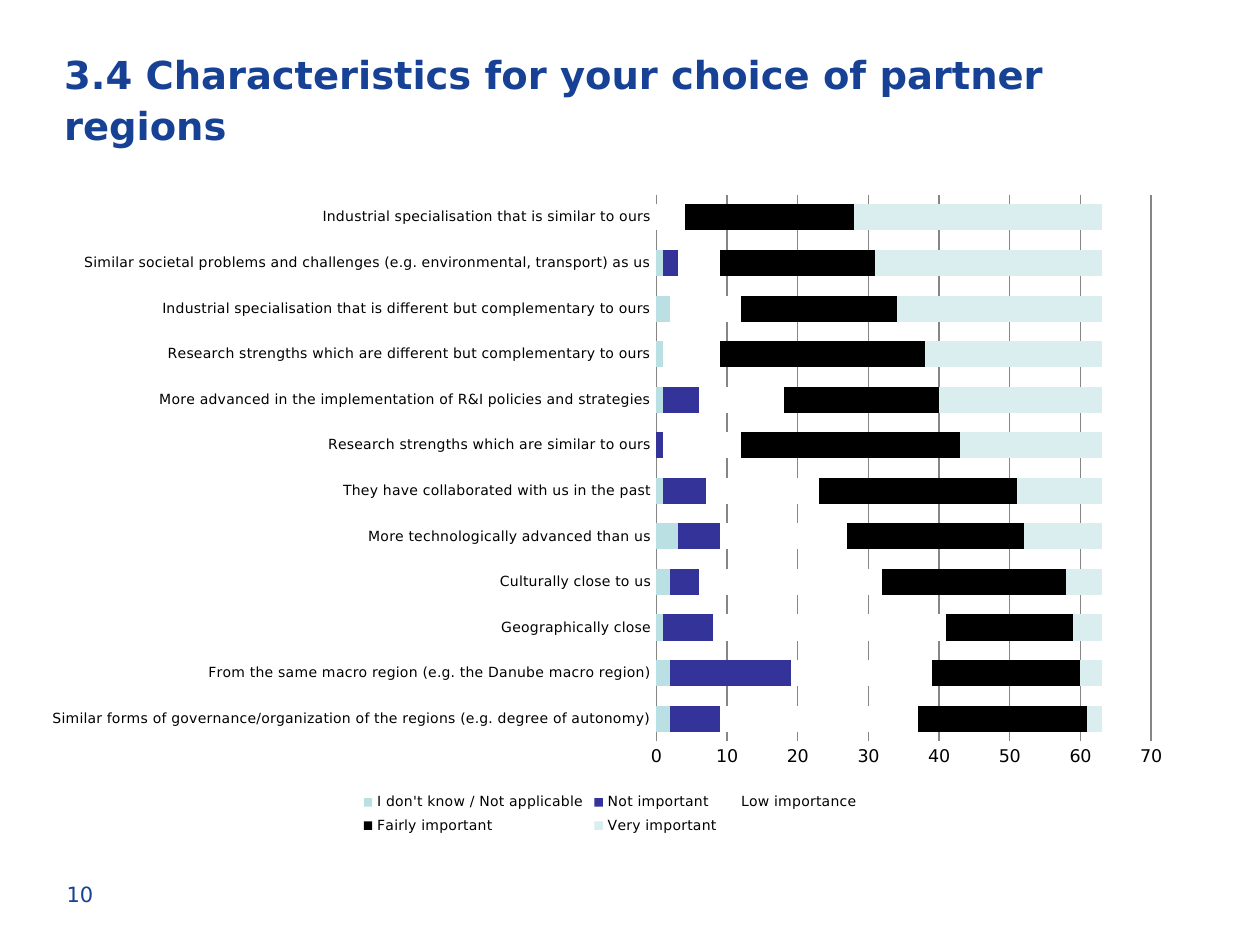
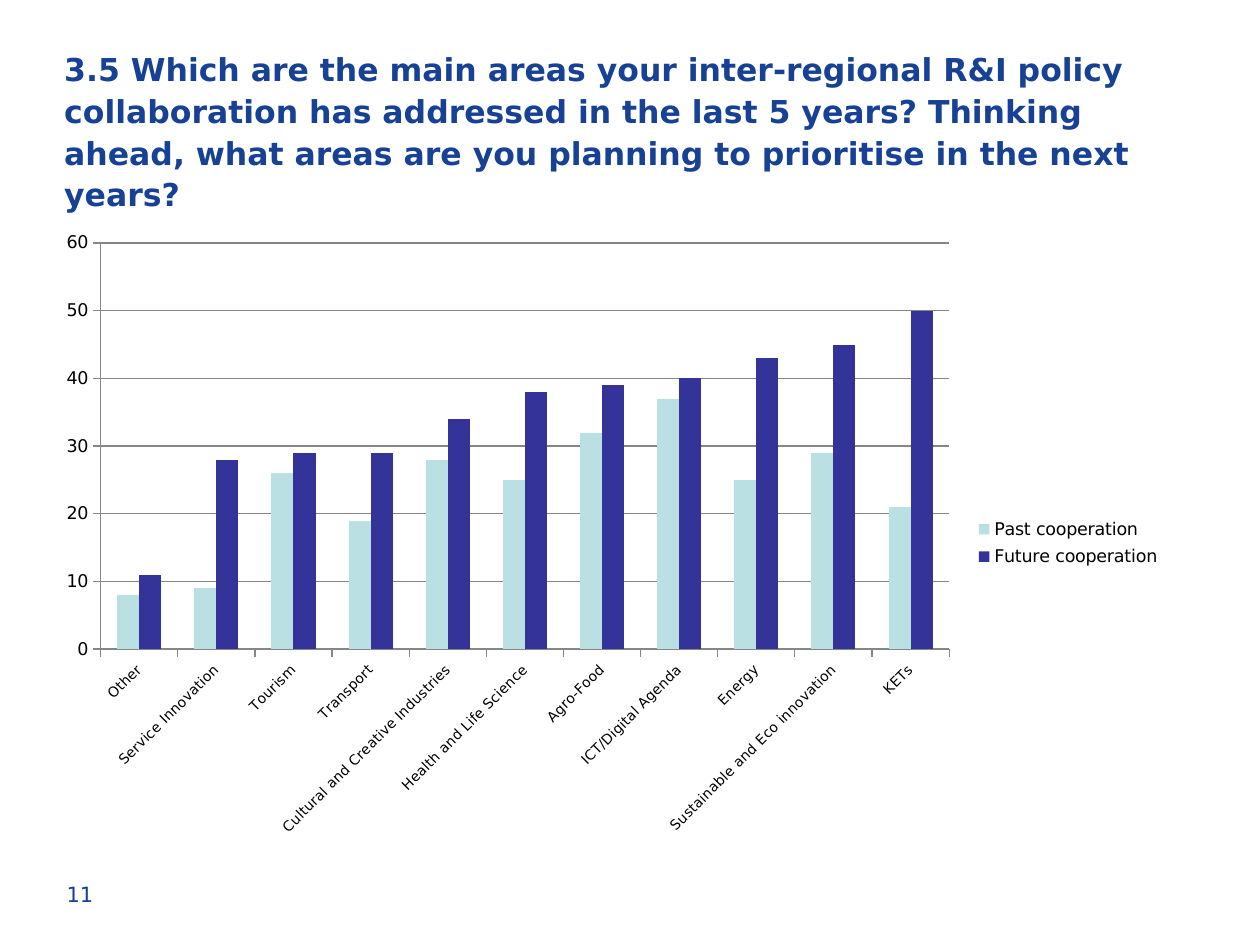
from lxml.etree import SubElement
from pptx import Presentation
from pptx.chart.data import CategoryChartData
from pptx.dml.color import RGBColor
from pptx.enum.chart import XL_CHART_TYPE as CT, XL_LEGEND_POSITION as LP, XL_TICK_MARK as TM
from pptx.enum.text import MSO_ANCHOR as MA, MSO_AUTO_SIZE as AS, PP_ALIGN as PA
from pptx.oxml.ns import qn
from pptx.util import Inches, Pt

FONT = "DejaVu Sans"
BLUE, BLACK, GRID = "164194", "000000", "868686"
TEAL, INDIGO, WHITE, PALE = "BBE0E3", "333399", "FFFFFF", "DAEDEF"
COLS, ROWS = 100, 75


def rgb(value):
    return RGBColor.from_string(value)


def apply(obj, **values):
    for name, value in values.items():
        setattr(obj, name, value)


class Deck:
    def __init__(self):
        self.prs = Presentation()
        apply(self.prs, slide_width=Inches(10), slide_height=Inches(7.5))
        self.s = None

    def cells(self, col, row, cols, rows):
        dx, dy = self.prs.slide_width / COLS, self.prs.slide_height / ROWS
        return [round(v) for v in (col * dx, row * dy, cols * dx, rows * dy)]

    def font(self, font, size, color=BLACK, bold=False):
        apply(font, name=FONT, size=Pt(size), bold=bold)
        font.color.rgb = rgb(color)

    def slide(self, title, size, number):
        self.s = self.prs.slides.add_slide(self.prs.slide_layouts[5])
        self.title(title, size)
        self.number(number)

    def title(self, text, size):
        sp = self.s.shapes.title
        left, top, width, height = self.cells(5.1, 3.7, 89.8, 7.1)
        apply(sp, left=left, top=top, width=width, height=height)
        tf = sp.text_frame
        apply(tf, text=text, word_wrap=True, auto_size=AS.NONE, vertical_anchor=MA.TOP,
              margin_left=0, margin_right=0, margin_top=0, margin_bottom=0)
        p = tf.paragraphs[0]
        apply(p, alignment=PA.LEFT, line_spacing=1.1)
        self.font(p.runs[0].font, size, BLUE, True)

    def number(self, value):
        sp = self.s.shapes.add_textbox(*self.cells(4.3, 69, 23.3, 4))
        tf = sp.text_frame
        apply(tf, text=str(value), word_wrap=True, vertical_anchor=MA.MIDDLE,
              margin_top=0, margin_bottom=0)
        self.font(tf.paragraphs[0].runs[0].font, 12, BLUE)

    def layout(self, parent, index, box, inner=False):
        for old in parent.findall(qn("c:layout")):
            parent.remove(old)
        layout = SubElement(parent, qn("c:layout"))
        parent.insert(index, layout)
        manual = SubElement(layout, qn("c:manualLayout"))
        tags = [("layoutTarget", "inner")] if inner else []
        tags += [("xMode", "edge"), ("yMode", "edge"), *zip("xywh", box)]
        for tag, val in tags:
            SubElement(manual, qn(f"c:{tag}")).set("val", str(val))

    def axis(self, axis, size, tick, line=True):
        apply(axis, major_tick_mark=tick, minor_tick_mark=TM.NONE)
        self.font(axis.tick_labels.font, size)
        if line:
            self.line(axis.format.line)
        else:
            axis.format.line.fill.background()

    def line(self, line):
        line.color.rgb = rgb(GRID)
        line.width = Pt(0.75)

    def chart(self, kind, box, cats, series, top, gap, overlap, tick, val_line,
              plot_box, legend_pos, legend_size, legend_box, angle=0):
        data = CategoryChartData()
        data.categories = cats
        for name, _, vals in series:
            data.add_series(name, vals)
        chart = self.s.shapes.add_chart(kind, *self.cells(*box), data).chart
        apply(chart, has_title=False, has_legend=True)
        self.font(chart.font, 10)

        plot = chart.plots[0]
        apply(plot, gap_width=gap, overlap=overlap, vary_by_categories=False)
        for ser, (_, color, _) in zip(plot.series, series):
            ser.format.fill.solid()
            ser.format.fill.fore_color.rgb = rgb(color)
            ser.invert_if_negative = False

        cat, val = chart.category_axis, chart.value_axis
        self.axis(cat, 8, tick)
        self.axis(val, 10, tick, val_line)
        apply(val, minimum_scale=0, maximum_scale=top, major_unit=10,
              has_major_gridlines=True)
        self.line(val.major_gridlines.format.line)
        if angle:
            body = cat.tick_labels.font._element.getparent().getparent().getparent()
            body.find(qn("a:bodyPr")).set("rot", str(angle * 60000))

        legend = chart.legend
        apply(legend, position=legend_pos, include_in_layout=False)
        self.font(legend.font, legend_size)
        root = chart._chartSpace
        self.layout(root.xpath("c:chart/c:plotArea")[0], 0, plot_box, inner=True)
        self.layout(root.xpath("c:chart/c:legend")[0], 1, legend_box)


CHARACTERISTICS = [
    "Similar forms of governance/organization of the regions (e.g. degree of autonomy)",
    "From the same macro region (e.g. the Danube macro region)",
    "Geographically close",
    "Culturally close to us",
    "More technologically advanced than us",
    "They have collaborated with us in the past",
    "Research strengths which are similar to ours",
    "More advanced in the implementation of R&I policies and strategies",
    "Research strengths which are different but complementary to ours",
    "Industrial specialisation that is different but complementary to ours",
    "Similar societal problems and challenges (e.g. environmental, transport) as us",
    "Industrial specialisation that is similar to ours",
]
IMPORTANCE = [
    ("I don't know / Not applicable", TEAL, [2, 2, 1, 2, 3, 1, None, 1, 1, 2, 1, None]),
    ("Not important", INDIGO, [7, 17, 7, 4, 6, 6, 1, 5, None, None, 2, None]),
    ("Low importance", WHITE, [28, 20, 33, 26, 18, 16, 11, 12, 8, 10, 6, 4]),
    ("Fairly important", BLACK, [24, 21, 18, 26, 25, 28, 31, 22, 29, 22, 22, 24]),
    ("Very important", PALE, [2, 3, 4, 5, 11, 12, 20, 23, 25, 29, 32, 35]),
]
AREAS = [
    "Other", "Service Innovation", "Tourism", "Transport",
    "Cultural and Creative Industries", "Health and Life Science", "Agro-Food",
    "ICT/Digital Agenda", "Energy", "Sustainable and Eco innovation", "KETs",
]
COOPERATION = [
    ("Past cooperation", TEAL, [8, 9, 26, 19, 28, 25, 32, 37, 25, 29, 21]),
    ("Future cooperation", INDIGO, [11, 28, 29, 29, 34, 38, 39, 40, 43, 45, 50]),
]


def main():
    deck = Deck()
    deck.slide("3.4 Characteristics for your choice of partner regions", 22, 10)
    deck.chart(CT.BAR_STACKED, (2.8, 14.4, 91.3, 52.3), CHARACTERISTICS, IMPORTANCE,
               top=70, gap=75, overlap=100, tick=TM.NONE, val_line=False,
               plot_box=(0.54, 0.02, 0.43, 0.83), legend_pos=LP.BOTTOM,
               legend_size=8, legend_box=(0.28, 0.92, 0.44, 0.08))

    deck.slide("3.5 Which are the main areas your inter-regional R&I policy collaboration "
               "has addressed in the last 5 years? Thinking ahead, what areas are you "
               "planning to prioritise in the next years?", 18, 11)
    deck.chart(CT.COLUMN_CLUSTERED, (3.5, 17.8, 89.8, 49.6), AREAS, COOPERATION,
               top=60, gap=150, overlap=0, tick=TM.OUTSIDE, val_line=True,
               plot_box=(0.05, 0.03, 0.75, 0.65), legend_pos=LP.RIGHT,
               legend_size=10, legend_box=(0.82, 0.46, 0.17, 0.1), angle=-45)
    deck.prs.save("out.pptx")


if __name__ == "__main__":
    main()
